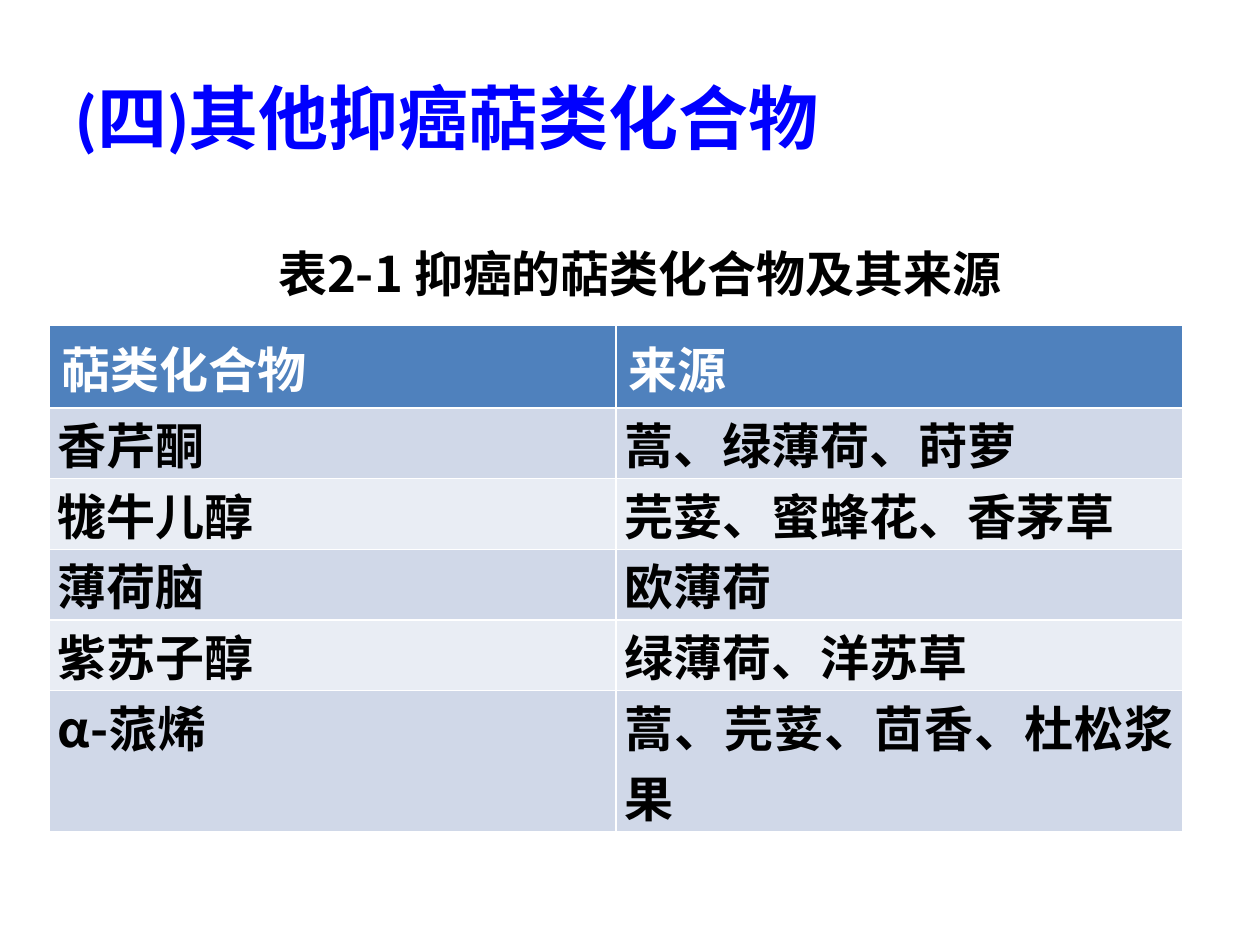
from lxml import etree
from pptx import Presentation
from pptx.dml.color import RGBColor
from pptx.enum import text
from pptx.oxml.ns import qn
from pptx.util import Inches, Pt

BLUE = RGBColor(0x00, 0x00, 0xFF)
BLACK = RGBColor(0x00, 0x00, 0x00)
WHITE = RGBColor(0xFF, 0xFF, 0xFF)
HEADER = RGBColor(0x4F, 0x81, 0xBD)
BAND_DARK = RGBColor(0xD0, 0xD8, 0xE8)
BAND_LIGHT = RGBColor(0xE9, 0xED, 0xF4)
CJK = "Noto Sans CJK SC"


def add_run(p, words, size, color, font=CJK):
    r = p.add_run()
    r.text = words
    r.font.size = Pt(size)
    r.font.bold = True
    r.font.name = font
    r.font.color.rgb = color
    ea = etree.SubElement(r.font._element, qn("a:ea"))
    ea.set("typeface", CJK)


def add_border(cell, side):
    ln = etree.SubElement(cell._tc.get_or_add_tcPr(), qn(f"a:ln{side}"), w=str(Pt(1)))
    fill = etree.SubElement(ln, qn("a:solidFill"))
    etree.SubElement(fill, qn("a:srgbClr"), val=str(WHITE))


prs = Presentation()
prs.slide_width, prs.slide_height = Inches(10), Inches(7.5)
s = prs.slides.add_slide(prs.slide_layouts[6])

title = s.shapes.add_textbox(Inches(0.5), Inches(0.3), Inches(9), Inches(1.25))
tf = title.text_frame
tf.word_wrap = True
tf.vertical_anchor = text.MSO_ANCHOR.MIDDLE
add_run(tf.paragraphs[0], "(四)其他抑癌萜类化合物", 40, BLUE, "Calibri")

rows = [
    ("萜类化合物", "来源"),
    ("香芹酮", "蒿、绿薄荷、莳萝"),
    ("牻牛儿醇", "芫荽、蜜蜂花、香茅草"),
    ("薄荷脑", "欧薄荷"),
    ("紫苏子醇", "绿薄荷、洋苏草"),
    ("α-蒎烯", "蒿、芫荽、茴香、杜松浆果"),
]
heights = [0.66, 0.56, 0.56, 0.56, 0.56, 1.12]
table = s.shapes.add_table(len(rows), 2, Inches(0.39), Inches(2.58),
                           Inches(9), Inches(sum(heights))).table
for i, (row, height) in enumerate(zip(rows, heights)):
    table.rows[i].height = Inches(height)
    for j, words in enumerate(row):
        cell = table.cell(i, j)
        for side in "LRTB":
            add_border(cell, side)
        cell.fill.solid()
        p = cell.text_frame.paragraphs[0]
        if i == 0:
            cell.fill.fore_color.rgb = HEADER
            add_run(p, words, 28, WHITE)
        else:
            cell.fill.fore_color.rgb = BAND_DARK if i % 2 else BAND_LIGHT
            cell.margin_left = cell.margin_right = Inches(0.07)
            cell.margin_top = cell.margin_bottom = 0
            p.alignment = text.PP_ALIGN.JUSTIFY
            add_run(p, words, 28, BLACK)

caption = s.shapes.add_textbox(Inches(2.11), Inches(1.88), Inches(6.41), Inches(0.57))
tf = caption.text_frame
tf.word_wrap = True
tf.auto_size = text.MSO_AUTO_SIZE.SHAPE_TO_FIT_TEXT
add_run(tf.paragraphs[0], "表2-1 抑癌的萜类化合物及其来源", 28, BLACK)

prs.save("out.pptx")
